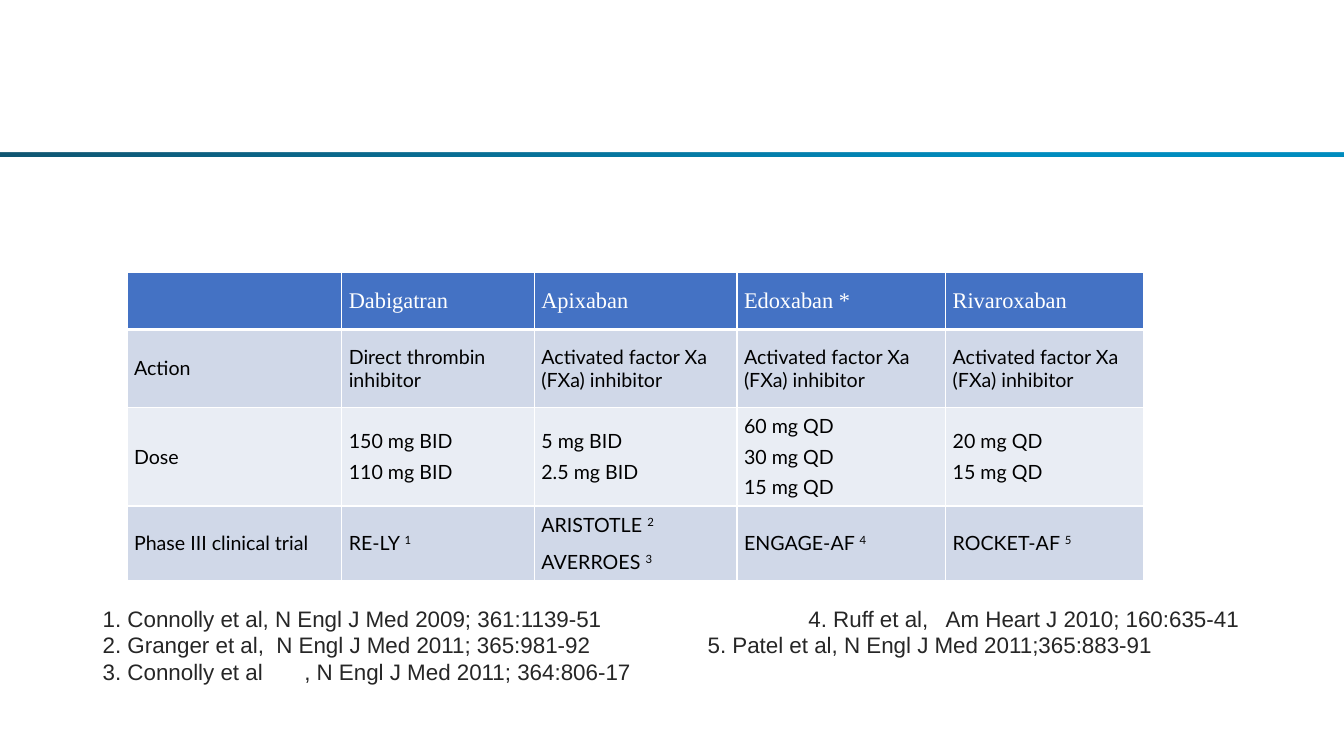
from dataclasses import dataclass

import pptx
import pptx.dml.color
import pptx.enum.shapes
import pptx.enum.text
import pptx.oxml
import pptx.oxml.ns
import pptx.util
from pptx.util import Inches

COLORS = {
    "header": "4472C4",
    "band_dark": "D0D8E8",
    "band_light": "E9EDF4",
    "white": "FFFFFF",
    "black": "000000",
    "reference": "262626",
    "rule_start": "124C64",
    "rule_end": "008CBE",
}


@dataclass
class Line:
    text: str
    superscript: str = ""


@dataclass
class TableRow:
    height: float
    fill: str
    cells: list[list[Line]]
    font: str = "Lato"
    size: int = 14
    color: str = "black"
    top_border: int = 1
    bottom_border: int = 1
    dose_spacing: int = 10


COLUMN_WIDTHS = [2.13, 1.91, 2.01, 2.07, 1.96]
FACTOR_XA = [Line("Activated factor Xa (FXa) inhibitor")]
ROWS = [
    TableRow(0.57, "header",
             [[], [Line("Dabigatran")], [Line("Apixaban")], [Line("Edoxaban *")], [Line("Rivaroxaban")]],
             font="Times New Roman", size=16, color="white", bottom_border=3),
    TableRow(0.77, "band_dark",
             [[Line("Action")], [Line("Direct thrombin inhibitor")], FACTOR_XA, FACTOR_XA, FACTOR_XA],
             top_border=3),
    TableRow(0.98, "band_light",
             [[Line("Dose")],
              [Line("150 mg BID"), Line("110 mg BID")],
              [Line("5 mg BID"), Line("2.5 mg BID")],
              [Line("60 mg QD"), Line("30 mg QD"), Line("15 mg QD")],
              [Line("20 mg QD"), Line("15 mg QD")]],
             dose_spacing=5),
    TableRow(0.74, "band_dark",
             [[Line("Phase III clinical trial")],
              [Line("RE-LY ", "1")],
              [Line("ARISTOTLE ", "2"), Line("AVERROES ", "3")],
              [Line("ENGAGE-AF ", "4")],
              [Line("ROCKET-AF ", "5")]]),
]
REFERENCES = [
    "1. Connolly et al, N Engl J Med 2009; 361:1139-51  \t\t4. Ruff et al,   Am Heart J 2010; 160:635-41",
    "2. Granger et al,  N Engl J Med 2011; 365:981-92\t\t5. Patel et al, N Engl J Med 2011;365:883-91",
    "3. Connolly et al\t, N Engl J Med 2011; 364:806-17",
]


def rgb(name: str) -> pptx.dml.color.RGBColor:
    return pptx.dml.color.RGBColor.from_string(COLORS[name])


def format_run(run, font: str, size: int, color: str) -> None:
    run.font.name = font
    run.font.size = pptx.util.Pt(size)
    run.font.bold = False
    run.font.color.rgb = rgb(color)


def add_band(slide, top: float, height: float):
    band = slide.shapes.add_shape(pptx.enum.shapes.MSO_SHAPE.RECTANGLE,
                                  Inches(0), Inches(top), Inches(13.33), Inches(height))
    band.shadow.inherit = False
    band.line.fill.background()
    return band


def add_header(slide) -> None:
    gradient = add_band(slide, -0.02, 1.57).fill
    gradient.gradient()
    gradient.gradient_angle = 280
    stops = zip(gradient.gradient_stops, ("rule_start", "rule_end"), (0.31, 0.86))
    for stop, color, position in stops:
        stop.color.rgb = rgb(color)
        stop.position = position
    panel = add_band(slide, -0.02, 1.53).fill
    panel.solid()
    panel.fore_color.rgb = rgb("white")


def set_borders(cell, row: TableRow) -> None:
    properties = cell._tc.get_or_add_tcPr()
    widths = {"lnL": 1, "lnR": 1, "lnT": row.top_border, "lnB": row.bottom_border}
    for side, width in widths.items():
        properties.append(pptx.oxml.parse_xml(
            f'<a:{side} {pptx.oxml.ns.nsdecls("a")} w="{pptx.util.Pt(width)}"><a:solidFill>'
            f'<a:srgbClr val="{COLORS["white"]}"/></a:solidFill></a:{side}>'))


def fill_cell(cell, lines: list[Line], row: TableRow) -> None:
    set_borders(cell, row)
    cell.fill.solid()
    cell.fill.fore_color.rgb = rgb(row.fill)
    cell.vertical_anchor = pptx.enum.text.MSO_ANCHOR.MIDDLE
    cell.margin_left = cell.margin_right = Inches(0.07)
    cell.margin_top = cell.margin_bottom = 0
    cell.text_frame.text = "\n".join(line.text for line in lines)
    for paragraph, line in zip(cell.text_frame.paragraphs, lines):
        paragraph.space_after = pptx.util.Pt(row.dose_spacing)
        if line.superscript:
            number = paragraph.add_run()
            number.text = line.superscript
            number.font._element.set("baseline", "30000")
        for run in paragraph.runs:
            format_run(run, row.font, row.size, row.color)


def add_drug_table(slide) -> None:
    table = slide.shapes.add_table(len(ROWS), len(COLUMN_WIDTHS), Inches(1.26), Inches(2.7),
                                   Inches(sum(COLUMN_WIDTHS)),
                                   Inches(sum(row.height for row in ROWS))).table
    for column, width in zip(table.columns, COLUMN_WIDTHS):
        column.width = Inches(width)
    for table_row, row in zip(table.rows, ROWS):
        table_row.height = Inches(row.height)
        for cell, lines in zip(table_row.cells, row.cells):
            fill_cell(cell, lines, row)


def add_references(slide) -> None:
    box = slide.shapes.add_textbox(Inches(0.92), Inches(5.95), Inches(11.5), Inches(0.91))
    box.text_frame.word_wrap = True
    box.text_frame.text = "\n".join(REFERENCES)
    # One tab stop per inch lines up the second column
    stops = "".join(f'<a:tab pos="{Inches(inch)}" algn="l"/>' for inch in range(1, 8))
    for paragraph in box.text_frame.paragraphs:
        paragraph._p.get_or_add_pPr().append(pptx.oxml.parse_xml(
            f'<a:tabLst {pptx.oxml.ns.nsdecls("a")}>{stops}</a:tabLst>'))
        for run in paragraph.runs:
            format_run(run, "Arial", 16, "reference")


def main() -> None:
    presentation = pptx.Presentation()
    presentation.slide_width = Inches(13.33)
    presentation.slide_height = Inches(7.5)
    slide = presentation.slides.add_slide(presentation.slide_layouts.get_by_name("Blank"))

    # White header panel with a gradient rule along its lower edge
    add_header(slide)
    # Comparison of the anticoagulants
    add_drug_table(slide)
    # Trial references
    add_references(slide)

    presentation.save("out.pptx")


if __name__ == "__main__":
    main()
